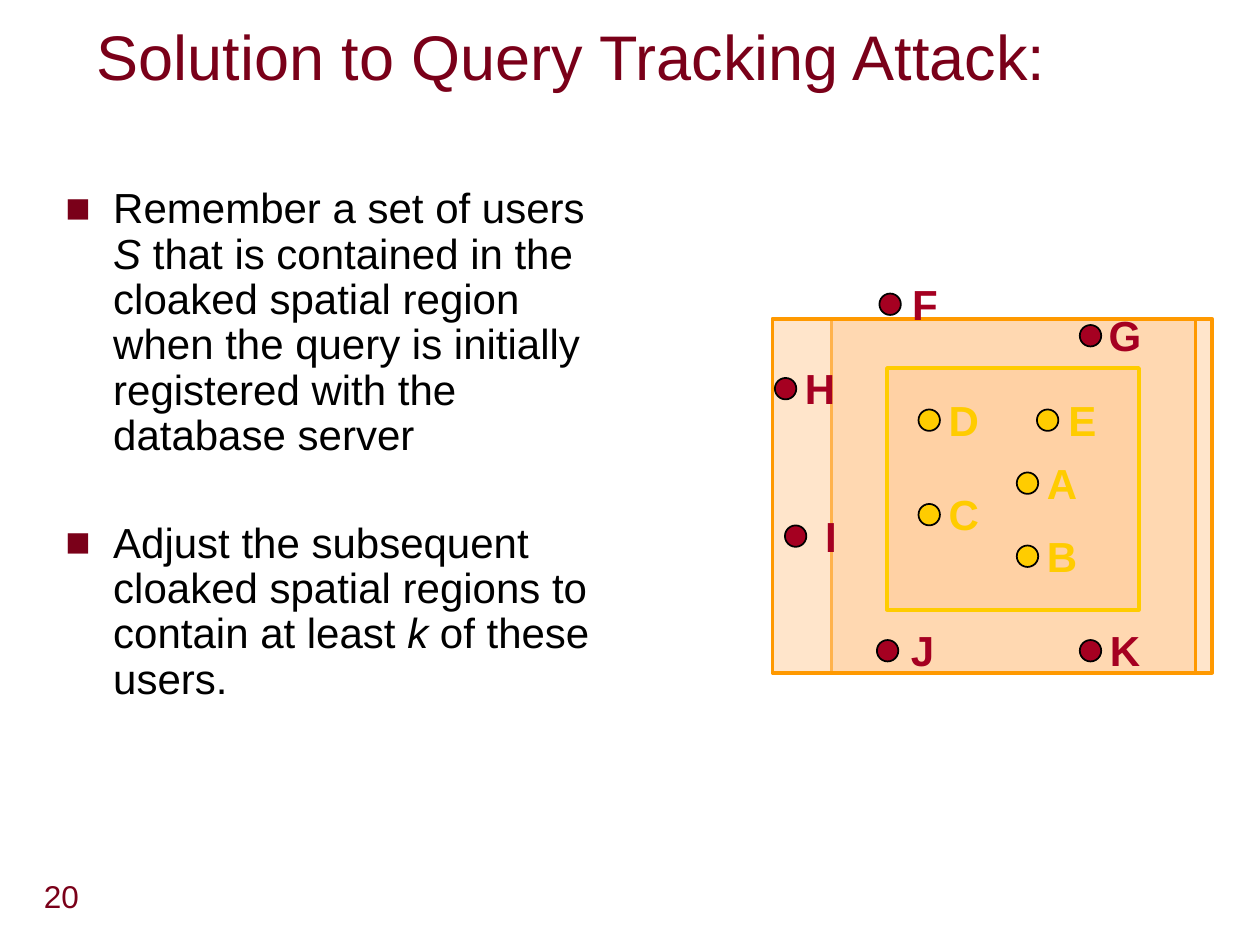
from pptx import Presentation
from pptx.dml.color import RGBColor
from pptx.enum.shapes import MSO_SHAPE as Shape
from pptx.enum.text import MSO_ANCHOR as Anchor, MSO_AUTO_SIZE as AutoSize
from pptx.oxml.ns import qn
from pptx.util import Inches, Pt
from lxml.etree import SubElement

MAROON, CRIMSON, YELLOW, ORANGE, PEACH, BLACK = (
    "7A0019", "A50021", "FFCC00", "FF9900", "FFCC99", "000000")


def color(value):
    """Turn a hex string into a colour."""
    return RGBColor.from_string(value)


def set_font(para, size, value, bold=False):
    """Set the font shared by all runs of a paragraph."""
    font = para.font
    font.name, font.size, font.bold = "Arial", Pt(size), bold
    font.color.rgb = color(value)


def add_text_box(shapes, left, top, width, height, wrap=True):
    """Add an empty text box and return its frame."""
    box = shapes.add_textbox(Inches(left), Inches(top), Inches(width), Inches(height))
    box.text_frame.word_wrap = wrap
    return box.text_frame


def add_line_text(shapes, box, text, size, value, bold=False, wrap=False):
    """Add one line of text in a box."""
    frame = add_text_box(shapes, *box, wrap=wrap)
    if wrap:
        frame.vertical_anchor = Anchor.MIDDLE
    else:
        frame.auto_size = AutoSize.SHAPE_TO_FIT_TEXT
    para = frame.paragraphs[0]
    para.text = text
    set_font(para, size, value, bold)


def add_outlined(shapes, kind, box, fill, line, weight, opacity=100):
    """Add a filled and outlined preset shape."""
    shape = shapes.add_shape(kind, *map(Inches, box))
    shape.shadow.inherit = False
    shape.fill.solid()
    shape.fill.fore_color.rgb = color(fill)
    shape.line.color.rgb = color(line)
    shape.line.width = Pt(weight)
    if opacity < 100:
        tint = shape.fill._xPr.find(qn("a:solidFill"))[0]
        SubElement(tint, qn("a:alpha"), val=str(opacity * 1000))


def add_bullet(para):
    """Give a paragraph a square bullet and a hanging indent."""
    props = para._p.get_or_add_pPr()
    props.set("marL", str(Inches(0.38)))
    props.set("indent", str(-Inches(0.38)))
    tint = SubElement(props, qn("a:buClr"))
    SubElement(tint, qn("a:srgbClr"), val=MAROON)
    SubElement(props, qn("a:buFont"), typeface="Arial")
    SubElement(props, qn("a:buChar"), char="■")


def add_body(page, left, top, width, height):
    """Add the bulleted text, with each middle span in italics."""
    bullets = [
        ("Remember a set of users ", "S",
         " that is contained in the cloaked spatial region when the query is "
         "initially registered with the database server"),
        ("Adjust the subsequent cloaked spatial regions to contain at least ", "k",
         " of these users."),
    ]
    frame = add_text_box(page.shapes, left, top, width, height)
    for index, parts in enumerate(bullets):
        para = frame.add_paragraph() if index else frame.paragraphs[0]
        add_bullet(para)
        para.line_spacing = 0.9
        para.space_before = Pt(35.5 if index else 0)
        set_font(para, 24, BLACK)
        for position, text in enumerate(parts):
            span = para.add_run()
            span.text = text
            if position == 1:
                span.font.italic = True


def add_user(page, left, top, name, value, gap, width):
    """Add a user as a dot grouped with its letter."""
    group = page.shapes.add_group_shape()
    add_outlined(group.shapes, Shape.OVAL, (left, top, 0.17, 0.17), value, BLACK, 1)
    add_line_text(group.shapes, (left + gap, top - 0.17, width, 0.5), name, 24, value, True)


def add_diagram(page, left, top):
    """Add the cloaked regions and the users in and around them."""
    regions = [
        (0.47, 0, 3.02, 2.81, ORANGE),
        (0, 0, 3.36, 2.81, ORANGE),
        (0.91, 0.39, 2, 1.92, YELLOW),
    ]
    for x, y, width, height, line in regions:
        box = (left + x, top + y, width, height)
        add_outlined(page.shapes, Shape.RECTANGLE, box, PEACH, line, 2, 50)
    users = [
        ("C", 1.16, 1.47, YELLOW, 0.14, 0.44),
        ("D", 1.16, 0.72, YELLOW, 0.14, 0.44),
        ("E", 2.1, 0.72, YELLOW, 0.15, 0.42),
        ("B", 1.94, 1.8, YELLOW, 0.14, 0.44),
        ("I", 0.1, 1.64, CRIMSON, 0.22, 0.29),
        ("J", 0.83, 2.55, CRIMSON, 0.17, 0.39),
        ("A", 1.94, 1.22, YELLOW, 0.14, 0.44),
        ("F", 0.85, -0.2, CRIMSON, 0.16, 0.4),
        ("H", 0.02, 0.47, CRIMSON, 0.14, 0.44),
        ("K", 2.44, 2.55, CRIMSON, 0.14, 0.44),
        ("G", 2.44, 0.05, CRIMSON, 0.13, 0.46),
    ]
    for name, x, y, value, gap, width in users:
        add_user(page, left + x, top + y, name, value, gap, width)


def main():
    """Build the slide and save the deck."""
    deck = Presentation()
    deck.slide_width, deck.slide_height = Inches(10), Inches(7.5)
    page = deck.slides.add_slide(deck.slide_layouts[6])
    add_line_text(page.shapes, (0.25, 6.91, 0.51, 0.4), "20", 18, MAROON)
    add_diagram(page, 6.13, 2.53)
    add_line_text(page.shapes, (0.67, 0.1, 8.83, 0.68),
                  "Solution to Query Tracking Attack:", 36, MAROON, wrap=True)
    add_body(page, 0.42, 1.44, 4.45, 5.81)
    deck.save("out.pptx")


if __name__ == "__main__":
    main()
